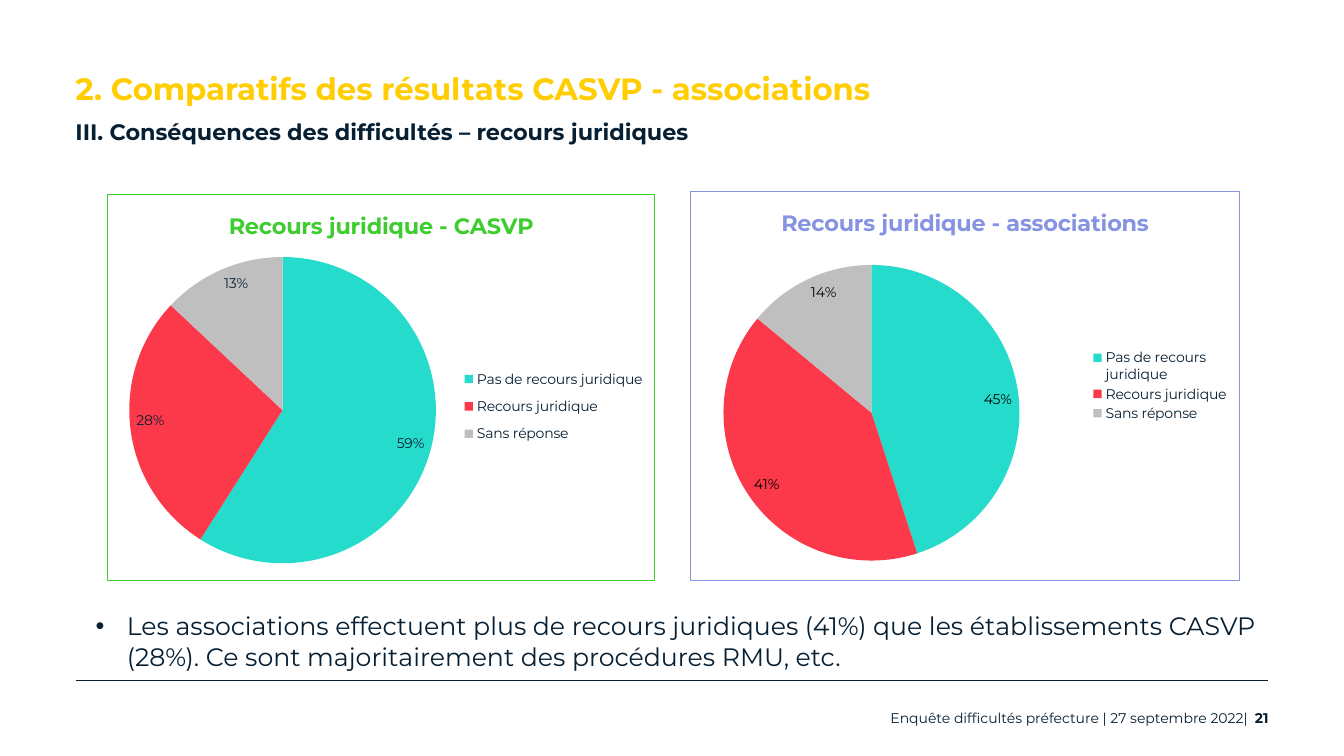
"""Build the slide comparing legal recourse between CASVP and associations."""
from lxml import etree
from pptx import Presentation
from pptx.chart.data import CategoryChartData
from pptx.dml.color import RGBColor
from pptx.enum.chart import XL_CHART_TYPE, XL_LABEL_POSITION, XL_LEGEND_POSITION
from pptx.enum.shapes import MSO_CONNECTOR
from pptx.enum.text import MSO_ANCHOR, MSO_AUTO_SIZE, PP_ALIGN
from pptx.oxml import parse_xml
from pptx.oxml.ns import nsdecls, qn
from pptx.util import Pt

PIE = XL_CHART_TYPE.PIE
INSIDE_END = XL_LABEL_POSITION.INSIDE_END
LEGEND_RIGHT = XL_LEGEND_POSITION.RIGHT
STRAIGHT = MSO_CONNECTOR.STRAIGHT
TOP, MIDDLE, BOTTOM = MSO_ANCHOR.TOP, MSO_ANCHOR.MIDDLE, MSO_ANCHOR.BOTTOM
NO_AUTOFIT = MSO_AUTO_SIZE.NONE
LEFT, RIGHT = PP_ALIGN.LEFT, PP_ALIGN.RIGHT

NAVY = RGBColor(0x07, 0x1F, 0x32)
YELLOW = RGBColor(0xFF, 0xCD, 0x00)
GREEN = RGBColor(0x3E, 0xCD, 0x2E)
PERIWINKLE = RGBColor(0x86, 0x93, 0xE2)
TURQUOISE = RGBColor(0x25, 0xDC, 0xCC)
RED = RGBColor(0xFB, 0x39, 0x4A)
GREY = RGBColor(0xBF, 0xBF, 0xBF)
BLACK = RGBColor(0, 0, 0)
FONT = "Montserrat"
PX = 9144


def format_font(font, size, color, bold=False):
    values = {"name": FONT, "size": Pt(size), "bold": bold}
    for name, value in values.items():
        setattr(font, name, value)
    font.color.rgb = color


def manual_layout(box, inner=False):
    target = '<c:layoutTarget val="inner"/>' if inner else ""
    modes = "".join(f'<c:{axis}Mode val="edge"/>' for axis in "xy")
    sizes = "".join(f'<c:{side} val="{value}"/>' for side, value in zip("xywh", box))
    return parse_xml(f'<c:layout {nsdecls("c")}><c:manualLayout>{target}{modes}{sizes}'
                     '</c:manualLayout></c:layout>')


presentation = Presentation()
presentation.slide_width = 1333 * PX
presentation.slide_height = 750 * PX
slide = presentation.slides.add_slide(presentation.slide_layouts[5])

rule = slide.shapes.add_connector(STRAIGHT, 75 * PX, 675 * PX, 1258 * PX, 675 * PX)
rule.line.color.rgb = NAVY
rule.line.width = Pt(0.65)
etree.SubElement(rule.element.spPr, qn("a:effectLst"))

texts = [
    ("title", "2. Comparatifs des résultats CASVP - associations",
     (65, 59, 1181, 51), 22, YELLOW, True, LEFT, TOP, 1.15),
    ("subtitle", "III. Conséquences des difficultés – recours juridiques",
     (65, 108, 1181, 41), 16, NAVY, True, LEFT, BOTTOM, 1.3),
    ("footer", "Enquête difficultés préfecture | 27 septembre 2022|",
     (578, 697, 669, 28), 10, NAVY, False, RIGHT, MIDDLE, 1.15),
    ("number", "21", (1209, 697, 59, 28), 10, NAVY, True, RIGHT, MIDDLE, 1.15),
    ("finding", "Les associations effectuent plus de recours juridiques (41%) que les "
     "établissements CASVP (28%). Ce sont majoritairement des procédures RMU, etc.",
     (85, 601, 1172, 71), 18, NAVY, False, LEFT, TOP, 1.0),
]
for role, text, box, size, color, bold, alignment, anchor, spacing in texts:
    left, top, width, height = (length * PX for length in box)
    if role == "title":
        shape = slide.shapes.title
        shape.left, shape.top, shape.width, shape.height = left, top, width, height
    else:
        shape = slide.shapes.add_textbox(left, top, width, height)
    frame = shape.text_frame
    frame.text = text
    frame_format = {"word_wrap": True, "auto_size": NO_AUTOFIT, "vertical_anchor": anchor}
    for name, value in frame_format.items():
        setattr(frame, name, value)
    paragraph = frame.paragraphs[0]
    paragraph.alignment = alignment
    paragraph.line_spacing = spacing
    if role == "finding":
        properties = paragraph._p.get_or_add_pPr()
        properties.set("marL", str(31 * PX))
        properties.set("indent", str(-31 * PX))
        etree.SubElement(properties, qn("a:buFont"), typeface="Arial")
        etree.SubElement(properties, qn("a:buChar"), char="•")
    format_font(paragraph.runs[0].font, size, color, bold)

categories = ["Pas de recours juridique", "Recours juridique", "Sans réponse"]
charts = [
    ("Recours juridique - associations", (684, 189, 546, 387), PERIWINKLE, BLACK,
     (0.45, 0.41, 0.14), (0.06, 0.19, 0.54, 0.76), (0.72, 0.4, 0.27, 0.2)),
    ("Recours juridique - CASVP", (106, 192, 544, 384), GREEN, NAVY,
     (0.59, 0.28, 0.13), (0.04, 0.16, 0.56, 0.8), (0.64, 0.43, 0.35, 0.24)),
]
for title, box, accent, label_color, values, plot_box, legend_box in charts:
    data = CategoryChartData(number_format="0%")
    data.categories = categories
    data.add_series(title, values)
    chart = slide.shapes.add_chart(PIE, *(length * PX for length in box), data).chart
    format_font(chart.font, 10, NAVY)

    chart.has_title = True
    chart.chart_title.include_in_layout = False
    chart.chart_title.text_frame.text = title
    format_font(chart.chart_title.text_frame.paragraphs[0].runs[0].font, 16, accent, True)

    chart.has_legend = True
    chart.legend.position = LEGEND_RIGHT
    chart.legend.include_in_layout = False
    format_font(chart.legend.font, 10, NAVY)

    plot = chart.plots[0]
    plot.vary_by_categories = True
    for index, color in enumerate((TURQUOISE, RED, GREY)):
        fill = plot.series[0].points[index].format.fill
        fill.solid()
        fill.fore_color.rgb = color
    plot.has_data_labels = True
    label_format = {"show_value": True, "show_percentage": False, "number_format": "0%",
                    "number_format_is_linked": False, "position": INSIDE_END}
    for name, value in label_format.items():
        setattr(plot.data_labels, name, value)
    format_font(plot.data_labels.font, 10, label_color)

    chart_space = chart.element
    plot_area = chart_space.find(".//" + qn("c:plotArea"))
    for layout in plot_area.findall(qn("c:layout")):
        plot_area.remove(layout)
    plot_area.insert(0, manual_layout(plot_box, inner=True))
    legend = chart_space.find(".//" + qn("c:legend"))
    for layout in legend.findall(qn("c:layout")):
        legend.remove(layout)
    legend.find(qn("c:legendPos")).addnext(manual_layout(legend_box))
    border = parse_xml(f'<c:spPr {nsdecls("c", "a")}><a:noFill/><a:ln w="{Pt(0.75)}"><a:solidFill>'
                       f'<a:srgbClr val="{accent}"/></a:solidFill></a:ln></c:spPr>')
    chart_space.find(qn("c:chart")).addnext(border)

presentation.save("out.pptx")
